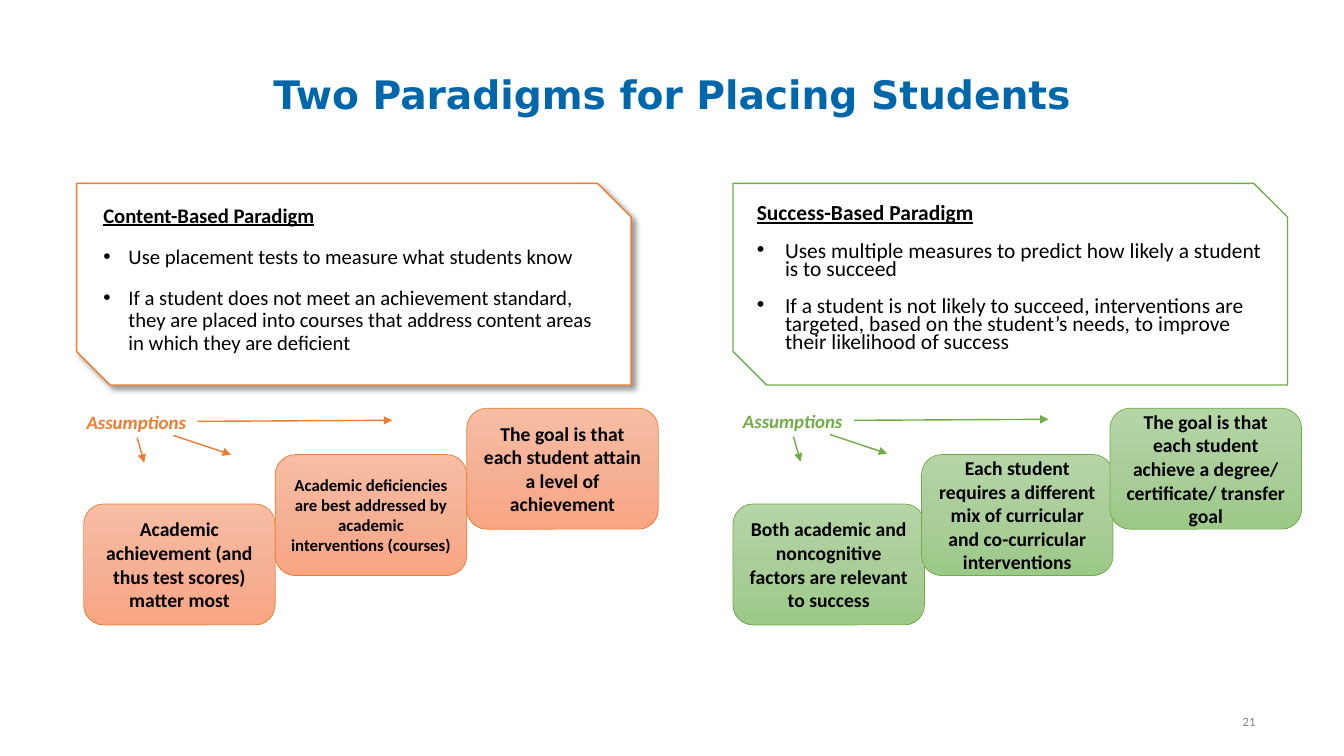
import copy
from dataclasses import dataclass

import pptx
import pptx.dml.color
import pptx.enum.dml
import pptx.enum.shapes
import pptx.enum.text
import pptx.oxml
import pptx.oxml.ns
import pptx.util

Inches = pptx.util.Inches
Pt = pptx.util.Pt
Shape = pptx.enum.shapes.MSO_SHAPE
Align = pptx.enum.text.PP_ALIGN
Anchor = pptx.enum.text.MSO_ANCHOR


@dataclass(frozen=True)
class Theme:
    font: str = "Calibri"
    title_font: str = "DejaVu Sans"
    title_color: str = "0067AB"
    text: str = "000000"
    paper: str = "FFFFFF"
    muted: str = "808080"
    title_size: float = 28
    label_size: float = 13.5
    step_size: float = 14
    small_step_size: float = 12
    number_size: float = 9
    paragraph_gap: float = 13.5


@dataclass(frozen=True)
class Step:
    text: str
    size: float


@dataclass(frozen=True)
class Paradigm:
    left: float
    accent: str
    gradient: tuple[str, str, str]
    heading: str
    points: tuple[str, ...]
    card_size: float
    heading_spacing: float
    point_spacing: float
    indent: float
    insets: tuple[float, float]
    shadow: bool
    label_top: float
    step_left: float
    step_pitch: float
    steps: tuple[Step, ...]


THEME = Theme()
CARD_TOP, CARD_WIDTH, CARD_HEIGHT = 1.82, 5.5, 2.0
STEP_TOPS = (5.0, 4.51, 4.05)
STEP_WIDTH, STEP_HEIGHT = 1.9, 1.2
# Arrow ends, measured from the corner of the "Assumptions" label
ARROWS = (
    ((0.6, 0.32), (0.67, 0.57)),
    ((1.2, 0.16), (3.13, 0.15)),
    ((0.96, 0.3), (1.53, 0.49)),
)

PARADIGMS = (
    Paradigm(
        left=0.76, accent="ED7D31", gradient=("F7BDA5", "F5B196", "F8A582"),
        heading="Content-Based Paradigm",
        points=(
            "Use placement tests to measure what students know",
            "If a student does not meet an achievement standard, they are placed "
            "into courses that address content areas in which they are deficient",
        ),
        card_size=14.8, heading_spacing=0.9, point_spacing=0.9, indent=0.25,
        insets=(0.1, 0.05), shadow=True, label_top=4.02,
        step_left=0.83, step_pitch=1.9,
        steps=(
            Step("Academic achievement (and thus test scores) matter most", THEME.step_size),
            Step("Academic deficiencies are best addressed by academic "
                 "interventions (courses)", THEME.small_step_size),
            Step("The goal is that each student attain a level of achievement",
                 THEME.step_size),
        ),
    ),
    Paradigm(
        left=7.27, accent="70AD47", gradient=("B5D5A7", "AACE9A", "9CC987"),
        heading="Success-Based Paradigm",
        points=(
            "Uses multiple measures to predict how likely a student is to succeed",
            "If a student is not likely to succeed, interventions are targeted, "
            "based on the student’s needs, to improve their likelihood of success",
        ),
        card_size=15.3, heading_spacing=0.8, point_spacing=0.7, indent=0.28,
        insets=(0.07, 0.04), shadow=False, label_top=4.01,
        step_left=7.27, step_pitch=1.87,
        steps=(
            Step("Both academic and noncognitive factors are relevant to success",
                 THEME.step_size),
            Step("Each student requires a different mix of curricular and "
                 "co-curricular interventions", THEME.step_size),
            Step("The goal is that each student achieve a degree/ certificate/ "
                 "transfer goal", THEME.step_size),
        ),
    ),
)


def rgb(value: str) -> pptx.dml.color.RGBColor:
    return pptx.dml.color.RGBColor.from_string(value)


def add_xml(parent, markup: str) -> None:
    """Append a drawing element; the markup leaves out the a: namespace."""
    head, rest = markup.split(" ", 1)
    parent.append(pptx.oxml.parse_xml(f"{head} {pptx.oxml.ns.nsdecls('a')} {rest}"))


def write(frame, text: str, *, size: float, color: str = THEME.text,
          font: str = THEME.font, bold: bool = False, italic: bool = False,
          underline: bool = False, align=Align.LEFT, spacing: float = 1.0,
          after: float = 0, bullet_indent: float = 0) -> None:
    """Fill the first paragraph of the frame, or add one if it is taken."""
    para = frame.paragraphs[0] if not frame.text else frame.add_paragraph()
    para.alignment, para.line_spacing, para.space_after = align, spacing, Pt(after)
    if bullet_indent:
        properties = para._p.get_or_add_pPr()
        properties.set("marL", str(Inches(bullet_indent)))
        properties.set("indent", str(-Inches(bullet_indent)))
        add_xml(properties, '<a:buFont typeface="Arial"/>')
        add_xml(properties, '<a:buChar char="•"/>')
    span = para.add_run()
    span.text = text
    span.font.name, span.font.size = font, Pt(size)
    span.font.bold, span.font.italic, span.font.underline = bold, italic, underline
    span.font.color.rgb = rgb(color)


def add_box(page, kind, left: float, top: float, width: float, height: float,
            line: str, weight: float):
    box = page.shapes.add_shape(kind, Inches(left), Inches(top),
                                Inches(width), Inches(height))
    box.line.color.rgb, box.line.width = rgb(line), Pt(weight)
    box.shadow.inherit = False
    box.text_frame.word_wrap = True
    return box


def add_text(page, left: float, top: float, width: float, height: float,
             text: str, *, wrap: bool = True, anchor=Anchor.MIDDLE, **style) -> None:
    frame = page.shapes.add_textbox(Inches(left), Inches(top), Inches(width),
                                    Inches(height)).text_frame
    frame.word_wrap, frame.vertical_anchor = wrap, anchor
    write(frame, text, **style)


def add_card(page, item: Paradigm) -> None:
    card = add_box(page, Shape.SNIP_2_DIAG_RECTANGLE, item.left, CARD_TOP,
                   CARD_WIDTH, CARD_HEIGHT, item.accent, 1)
    card.fill.solid()
    card.fill.fore_color.rgb = rgb(THEME.paper)
    if item.shadow:
        effects = card._element.spPr.find(pptx.oxml.ns.qn("a:effectLst"))
        add_xml(effects, f'<a:outerShdw blurRad="{Pt(4)}" dist="{Pt(3)}" dir="2700000" '
                         'algn="tl" rotWithShape="0"><a:srgbClr val="000000">'
                         '<a:alpha val="40000"/></a:srgbClr></a:outerShdw>')
    frame = card.text_frame
    frame.vertical_anchor = Anchor.TOP
    frame.margin_left = frame.margin_right = Inches(item.insets[0])
    frame.margin_top = frame.margin_bottom = Inches(item.insets[1])
    write(frame, item.heading, size=item.card_size, bold=True, underline=True,
          spacing=item.heading_spacing, after=THEME.paragraph_gap)
    for point in item.points:
        write(frame, point, size=item.card_size, spacing=item.point_spacing,
              after=THEME.paragraph_gap, bullet_indent=item.indent)


def add_steps(page, item: Paradigm) -> None:
    for index, (step, top) in enumerate(zip(item.steps, STEP_TOPS)):
        box = add_box(page, Shape.ROUNDED_RECTANGLE,
                      item.step_left + index * item.step_pitch, top,
                      STEP_WIDTH, STEP_HEIGHT, item.accent, 0.5)
        box.fill.gradient()
        box.fill.gradient_angle = 270
        stops = box._element.spPr.find(".//" + pptx.oxml.ns.qn("a:gsLst"))
        stops.insert(1, copy.deepcopy(stops[0]))
        for stop, color, position in zip(box.fill.gradient_stops, item.gradient, (0, 0.5, 1)):
            stop.color.rgb, stop.position = rgb(color), position
        box.text_frame.vertical_anchor = Anchor.MIDDLE
        write(box.text_frame, step.text, size=step.size, bold=True, align=Align.CENTER)


def add_assumptions(page, item: Paradigm) -> None:
    add_text(page, item.left, item.label_top, 1.21, 0.33, "Assumptions", wrap=False,
             anchor=Anchor.TOP, size=THEME.label_size, color=item.accent,
             bold=True, italic=True)
    for start, end in ARROWS:
        ends = [Inches(origin + offset) for point in (start, end)
                for origin, offset in zip((item.left, item.label_top), point)]
        arrow = page.shapes.add_connector(pptx.enum.shapes.MSO_CONNECTOR.STRAIGHT, *ends)
        arrow.line.color.rgb, arrow.line.width = rgb(item.accent), Pt(1)
        add_xml(arrow.line._get_or_add_ln(), '<a:tailEnd type="triangle"/>')
        add_xml(arrow._element.spPr, "<a:effectLst />")


def main() -> None:
    deck = pptx.Presentation()
    deck.slide_width, deck.slide_height = Inches(13.33), Inches(7.5)
    page = deck.slides.add_slide(deck.slide_layouts[6])

    # Title and page number
    add_text(page, 0, 0.31, 13.33, 1.25, "Two Paradigms for Placing Students",
             size=THEME.title_size, font=THEME.title_font, color=THEME.title_color,
             bold=True, align=Align.CENTER)
    add_text(page, 9.44, 6.96, 3.11, 0.4, "21", size=THEME.number_size,
             color=THEME.muted, align=Align.RIGHT)

    # One column per paradigm
    for item in PARADIGMS:
        add_card(page, item)
        add_steps(page, item)
        add_assumptions(page, item)

    deck.save("out.pptx")


if __name__ == "__main__":
    main()
